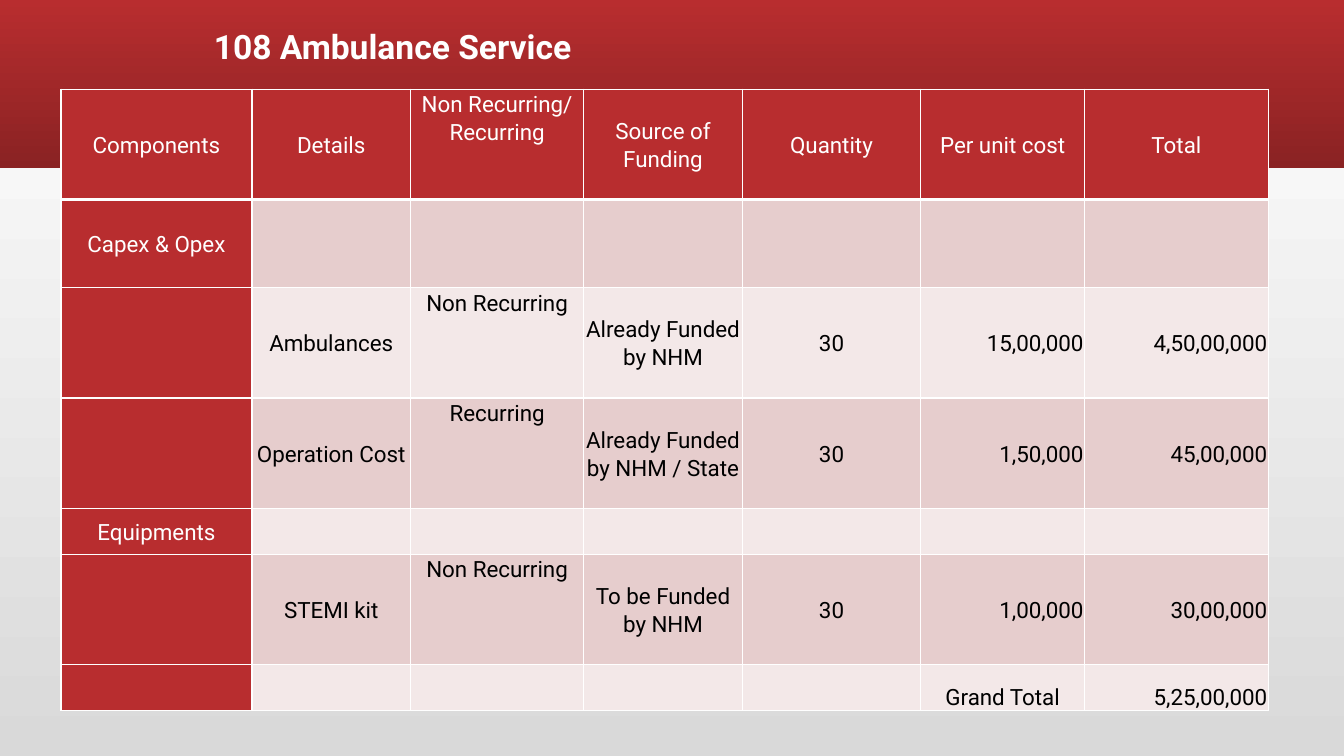
from pptx import Presentation
from pptx import util as u
from pptx.dml.color import RGBColor
from pptx.enum import shapes, text
from pptx.oxml import parse_xml
from pptx.oxml.ns import nsdecls

PX = 9525  # EMU per px, 96 px to the inch
FONT = "Roboto"
COLORS = {
    "red": "B82D2F", "dark_red": "8A2223", "pink": "E6CDCD", "pale": "F3E8E8",
    "white": "FFFFFF", "black": "000000", "grey": "D9D9D9",
}
CENTER, RIGHT, LEFT = text.PP_ALIGN.CENTER, text.PP_ALIGN.RIGHT, text.PP_ALIGN.LEFT
TOP, MIDDLE, BOTTOM = (text.MSO_ANCHOR.TOP, text.MSO_ANCHOR.MIDDLE,
                       text.MSO_ANCHOR.BOTTOM)

COLUMN_WIDTHS = [182, 151, 165, 151, 170, 156, 175]
ROW_HEIGHTS = [105, 84, 105, 105, 44, 105, 44]
RECURRING_COLUMN, FIRST_COST_COLUMN = 2, 5
ROWS = [
    ["Components", "Details", "Non Recurring/ Recurring", "Source of Funding",
     "Quantity", "Per unit cost", "Total"],
    ["Capex & Opex", "", "", "", "", "", ""],
    ["", "Ambulances", "Non Recurring", "Already Funded by NHM", "30",
     "15,00,000", "4,50,00,000"],
    ["", "Operation Cost", "Recurring", "Already Funded by NHM / State", "30",
     "1,50,000", "45,00,000"],
    ["Equipments", "", "", "", "", "", ""],
    ["", "STEMI kit", "Non Recurring", "To be Funded by NHM", "30",
     "1,00,000", "30,00,000"],
    ["", "", "", "", "", "Grand Total", "5,25,00,000"],
]


def color(name):
    return RGBColor.from_string(COLORS[name])


def emu(box):
    return [length * PX for length in box]


def write(frame, words, size=16, ink="black", bold=False, align=CENTER,
          line_spacing=None, space_after=None):
    para = frame.paragraphs[0]
    para.alignment = align
    para.line_spacing = line_spacing
    para.space_after = space_after
    span = para.add_run()
    span.text = words
    span.font.name = FONT
    span.font.size = u.Pt(size)
    span.font.bold = bold
    span.font.color.rgb = color(ink)


def fill_gradient(fill, first, last, angle):
    fill.gradient()
    fill.gradient_angle = angle
    for stop, name in zip(fill.gradient_stops, (first, last)):
        stop.color.rgb = color(name)


def add_backdrop(page, box):
    """Grey page gradient with a red band across the top."""
    fill_gradient(page.background.fill, "grey", "white", 90)
    band = page.shapes.add_shape(shapes.MSO_SHAPE.RECTANGLE, *emu(box))
    band.shadow.inherit = False
    band.line.fill.background()
    fill_gradient(band.fill, "red", "dark_red", 270)
    page.shapes.title.element.addprevious(band.element)


def add_title(page, box, words):
    title = page.shapes.title
    title.left, title.top, title.width, title.height = emu(box)
    frame = title.text_frame
    frame.word_wrap = False
    frame.auto_size = text.MSO_AUTO_SIZE.NONE
    frame.vertical_anchor = TOP
    write(frame, words, size=24, ink="white", bold=True, align=LEFT)


def add_borders(cell, row):
    """White rules, thicker below the header row."""
    properties = cell._tc.get_or_add_tcPr()
    thick_side = {0: "B", 1: "T"}.get(row)
    for side in "LRTB":
        width = u.Pt(3 if side == thick_side else 1)
        properties.append(parse_xml(
            f'<a:ln{side} {nsdecls("a")} w="{width}"><a:solidFill>'
            f'<a:srgbClr val="{COLORS["white"]}"/></a:solidFill></a:ln{side}>'))


def fill_cell(cell, row, column, words):
    on_red = row == 0 or column == 0
    add_borders(cell, row)
    cell.fill.solid()
    cell.fill.fore_color.rgb = color(
        "red" if on_red else "pink" if row % 2 else "pale")
    if not words:
        return
    cell.margin_left = cell.margin_right = cell.margin_top = PX
    cell.margin_bottom = 0
    if row == len(ROWS) - 1:
        cell.vertical_anchor = BOTTOM
    else:
        cell.vertical_anchor = TOP if column == RECURRING_COLUMN else MIDDLE
    is_cost = column >= FIRST_COST_COLUMN and words[0].isdigit()
    write(cell.text_frame, words, ink="white" if on_red else "black",
          align=RIGHT if is_cost else CENTER,
          line_spacing=1.07, space_after=u.Pt(8))


def add_cost_table(page, left, top):
    box = (left, top, sum(COLUMN_WIDTHS), sum(ROW_HEIGHTS))
    table = page.shapes.add_table(
        len(ROW_HEIGHTS), len(COLUMN_WIDTHS), *emu(box)).table
    for column, width in zip(table.columns, COLUMN_WIDTHS):
        column.width = width * PX
    for row, height in zip(table.rows, ROW_HEIGHTS):
        row.height = height * PX
    for row, entries in enumerate(ROWS):
        for column, words in enumerate(entries):
            fill_cell(table.cell(row, column), row, column, words)


def main():
    deck = Presentation()
    deck.slide_width, deck.slide_height = emu((1280, 720))
    page = deck.slides.add_slide(deck.slide_layouts.get_by_name("Title Only"))
    add_backdrop(page, (0, 0, 1280, 160))
    add_cost_table(page, 58, 85)
    add_title(page, (194, 20, 372, 78), "108 Ambulance Service")
    deck.save("out.pptx")


if __name__ == "__main__":
    main()
